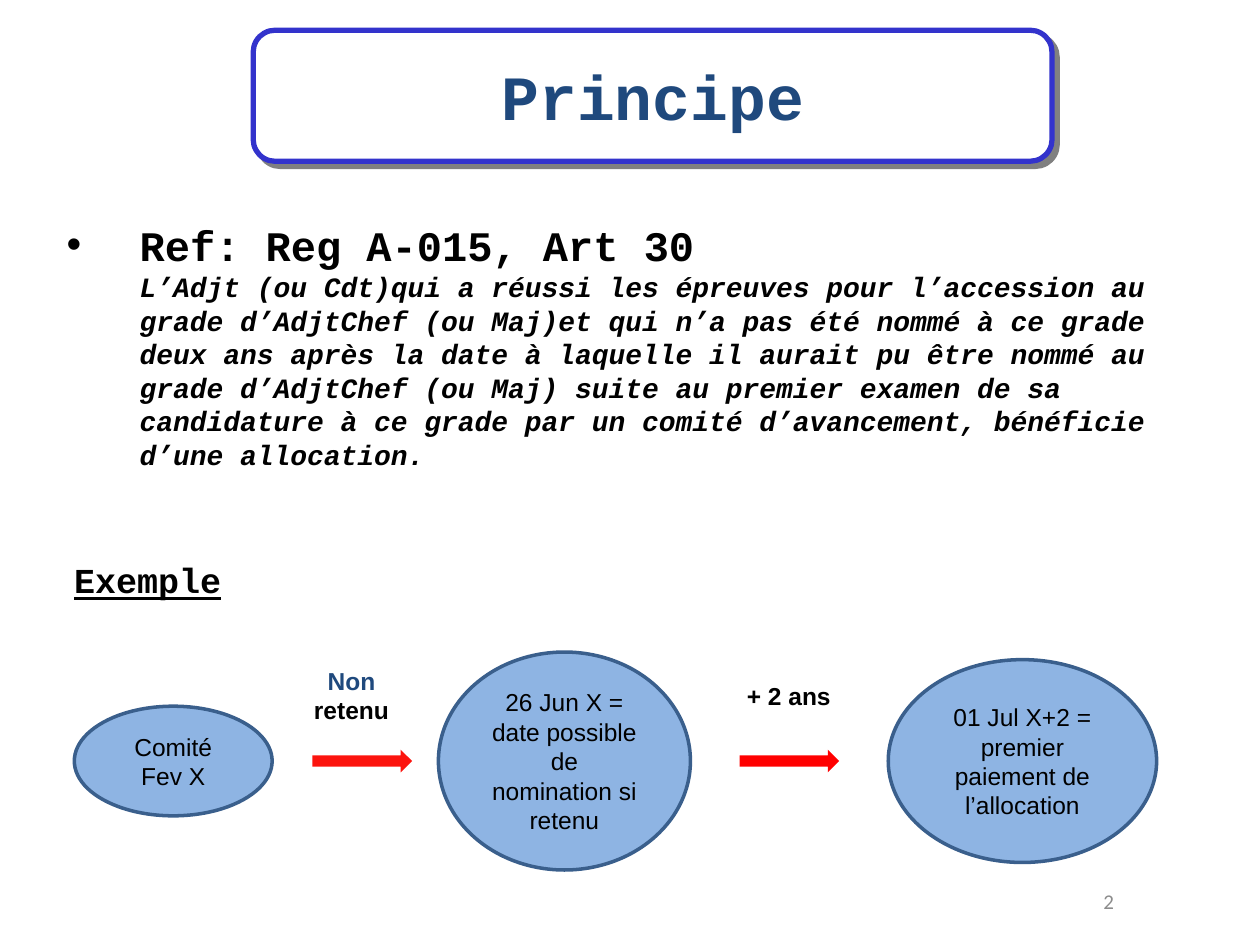
from lxml.etree import SubElement
from pptx import Presentation
from pptx.dml.color import RGBColor
from pptx.enum.shapes import MSO_SHAPE
from pptx.enum.text import MSO_ANCHOR, MSO_AUTO_SIZE, PP_ALIGN
from pptx.oxml import parse_xml
from pptx.oxml.ns import nsdecls, qn
from pptx.util import Inches, Pt

BLACK = RGBColor(0, 0, 0)
WHITE = RGBColor(255, 255, 255)
NAVY = RGBColor(0x1F, 0x49, 0x7D)
FRAME_BLUE = RGBColor(0x33, 0x33, 0xCC)
OVAL_BLUE = RGBColor(0x8E, 0xB4, 0xE3)
OVAL_EDGE = RGBColor(0x3A, 0x5F, 0x8C)
BRIGHT_RED = RGBColor(0xFC, 0x14, 0x0E)
RED = RGBColor(255, 0, 0)
GREY = RGBColor(0x8C, 0x8C, 0x8C)
MONO, SANS = "Courier New", "Arial"

TITLE = "Principe"
REFERENCE = "Ref: Reg A-015, Art 30"
RULE = (
    "L’Adjt (ou Cdt)qui a réussi les épreuves pour l’accession au grade "
    "d’AdjtChef (ou Maj)et qui n’a pas été nommé à ce grade deux ans après "
    "la date à laquelle il aurait pu être nommé au grade d’AdjtChef (ou Maj) "
    "suite au premier examen de sa candidature à ce grade par un comité "
    "d’avancement, bénéficie d’une allocation."
)
# Text, left, width, height
STEPS = [
    ("Comité Fev X", 0.59, 1.57, 0.87),
    ("26 Jun X = date possible de nomination si retenu", 3.48, 2, 1.73),
    ("01 Jul X+2 = premier paiement de l’allocation", 7.05, 2.13, 1.61),
]
# Left, colour
ARROWS = [(2.48, BRIGHT_RED), (5.87, RED)]
# Coloured words, left, width
ARROW_LABELS = [
    ([("Non ", NAVY), ("retenu", BLACK)], 2.32, 0.94),
    ([("+ 2 ans", BLACK)], 5.59, 1.34),
]
FLOW_MIDDLE, LABEL_MIDDLE = 6.04, 5.52
ARROW_SIZE = (0.79, 0.18)
TITLE_AREA = (2.01, 0.24, 6.34, 1.04)


def write(paragraph, text, font=SANS, size=14, color=BLACK, align=None, **style):
    """Add a span; style holds bold, italic or underline."""
    if align is not None:
        paragraph.alignment = align
    span = paragraph.add_run()
    span.text = text
    span.font.name, span.font.size = font, Pt(size)
    span.font.color.rgb = color
    for name, value in style.items():
        setattr(span.font, name, value)


def prepare_text(box, anchor=MSO_ANCHOR.MIDDLE):
    frame = box.text_frame
    frame.word_wrap = True
    frame.auto_size = MSO_AUTO_SIZE.NONE
    frame.vertical_anchor = anchor
    return frame.paragraphs[0]


def add_text(page, area, anchor=MSO_ANCHOR.MIDDLE):
    return prepare_text(page.shapes.add_textbox(*map(Inches, area)), anchor)


def add_shape(page, kind, area, fill, edge=None, edge_width=0):
    shape = page.shapes.add_shape(kind, *map(Inches, area))
    shape.shadow.inherit = False
    shape.fill.solid()
    shape.fill.fore_color.rgb = fill
    if edge is None:
        shape.line.fill.background()
    else:
        shape.line.color.rgb = edge
        shape.line.width = Pt(edge_width)
    return shape


def centred(left, width, height, middle):
    return left, middle - height / 2, width, height


def add_title(page):
    panel = add_shape(page, MSO_SHAPE.ROUNDED_RECTANGLE, TITLE_AREA, WHITE, FRAME_BLUE, 3)
    panel._element.spPr.find(qn("a:effectLst")).append(parse_xml(
        f'<a:outerShdw {nsdecls("a")} dist="{Pt(4.2)}" dir="2700000" algn="ctr" '
        'rotWithShape="0"><a:srgbClr val="808080"/></a:outerShdw>'
    ))
    title = page.shapes.title
    title.left, title.top, title.width, title.height = map(Inches, TITLE_AREA)
    write(prepare_text(title), TITLE, MONO, 36, NAVY, PP_ALIGN.CENTER, bold=True)
    panel._element.addnext(title._element)


def add_reference(page):
    para = add_text(page, (0.43, 1.69, 9, 2.2), MSO_ANCHOR.TOP)
    properties = para._p.get_or_add_pPr()
    properties.set("marL", str(Inches(0.58)))
    properties.set("indent", str(-Inches(0.58)))
    SubElement(properties, qn("a:buFont"), typeface=SANS)
    SubElement(properties, qn("a:buChar"), char="•")
    write(para, REFERENCE, MONO, 24, bold=True)
    para.add_line_break()
    write(para, RULE, MONO, 16, bold=True, italic=True)


def add_example(page):
    heading = add_text(page, (0.49, 4.38, 3, 0.42), MSO_ANCHOR.TOP)
    write(heading, "Exemple", MONO, 20, bold=True, underline=True)
    for text, left, width, height in STEPS:
        area = centred(left, width, height, FLOW_MIDDLE)
        oval = add_shape(page, MSO_SHAPE.OVAL, area, OVAL_BLUE, OVAL_EDGE, 2)
        write(prepare_text(oval), text, align=PP_ALIGN.CENTER)
    for left, color in ARROWS:
        add_shape(page, MSO_SHAPE.RIGHT_ARROW, centred(left, *ARROW_SIZE, FLOW_MIDDLE), color)
    for words, left, width in ARROW_LABELS:
        para = add_text(page, centred(left, width, 0.46, LABEL_MIDDLE))
        for text, color in words:
            write(para, text, color=color, align=PP_ALIGN.CENTER, bold=True)


def main():
    deck = Presentation()
    deck.slide_width, deck.slide_height = Inches(10), Inches(7.5)
    page = deck.slides.add_slide(deck.slide_layouts[5])
    add_title(page)
    add_reference(page)
    add_example(page)
    number = add_text(page, (7.17, 6.95, 1.77, 0.4))
    write(number, "2", "Calibri", 12, GREY, PP_ALIGN.RIGHT)
    deck.save("out.pptx")


if __name__ == "__main__":
    main()
